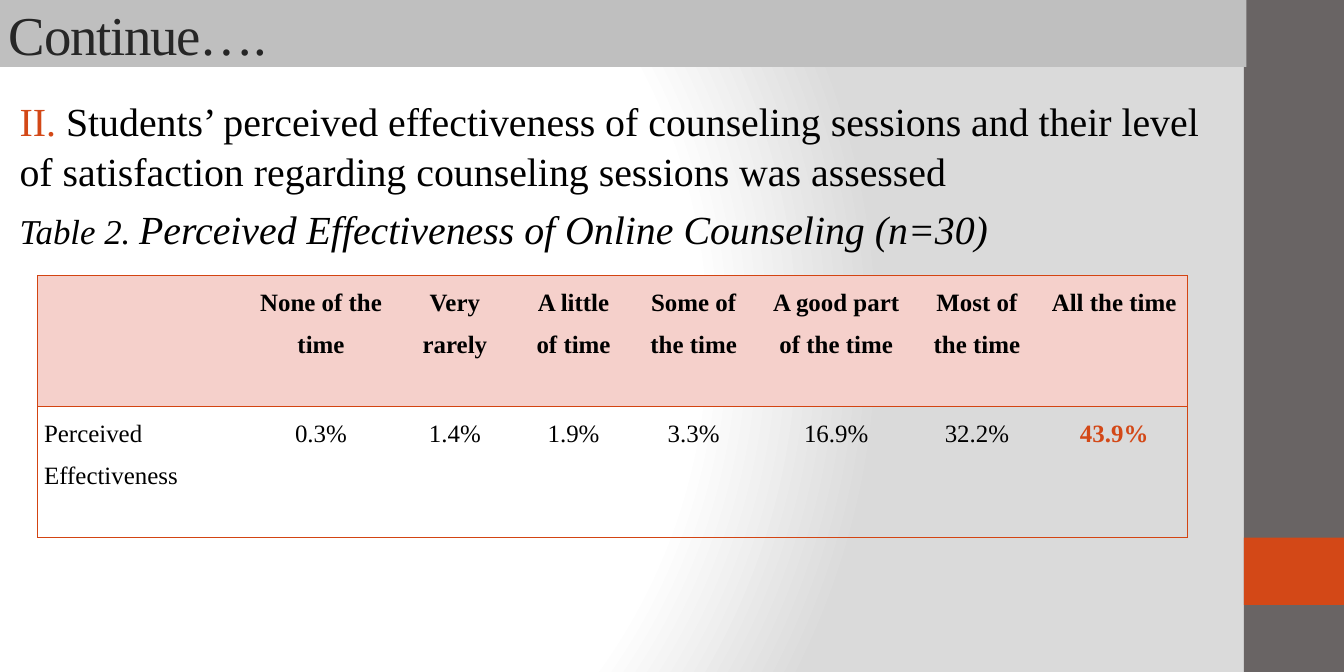
from lxml import etree
from pptx import Presentation
from pptx.dml.color import RGBColor
from pptx.enum.shapes import MSO_SHAPE
from pptx.enum.text import MSO_ANCHOR, MSO_AUTO_SIZE, PP_ALIGN
from pptx.oxml import parse_xml
from pptx.oxml.ns import nsdecls, qn
from pptx.util import Cm, Pt

RECT = MSO_SHAPE.RECTANGLE
MIDDLE, TOP = MSO_ANCHOR.MIDDLE, MSO_ANCHOR.TOP
LEFT, CENTER, JUST = PP_ALIGN.LEFT, PP_ALIGN.CENTER, PP_ALIGN.JUSTIFY
FIXED = MSO_AUTO_SIZE.NONE
FONT = "Times New Roman"
PLAIN = "{2D5ABB26-0587-4C30-8999-92F81FD0307C}"
HUES = {
    "white": "FFFFFF", "mist": "DADADA", "side": "696464",
    "accent": "D34817", "band": "BFBFBF", "title": "262626",
    "text": "000000", "head": "F5D0CB", "rule": "D34412",
}
COLS = [6.05, 3.96, 3.63, 3.1, 3.71, 4.37, 3.61, 4.17]
ROWS = [
    ["", "None of the time", "Very rarely", "A little of time",
     "Some of the time", "A good part of the time", "Most of the time",
     "All the time"],
    ["Perceived Effectiveness", "0.3%", "1.4%", "1.9%", "3.3%", "16.9%",
     "32.2%", "43.9%"],
]
LINES = [
    [("II. ", 32, "accent", False),
     ("Students’ perceived effectiveness of counseling sessions and their "
      "level of satisfaction regarding counseling sessions was assessed",
      32, "text", False)],
    [("Table 2. ", 28, "text", True),
     ("Perceived Effectiveness of Online Counseling (n=30)",
      32, "text", True)],
]


def hue(name):
    return RGBColor.from_string(HUES[name])


def style(run, size, name, bold=False, slant=False):
    font = run.font
    font.name, font.size = FONT, Pt(size)
    font.bold, font.italic = bold, slant
    font.color.rgb = hue(name)


def place(shape, box):
    shape.left, shape.top, shape.width, shape.height = map(Cm, box)


def paint_back(slide):
    slide.background.fill.gradient()
    old = slide.element.find(".//" + qn("a:gradFill"))
    stops = "".join(
        f'<a:gs pos="{pos}"><a:srgbClr val="{HUES[name]}"/></a:gs>'
        for pos, name in ((0, "white"), (75000, "white"), (100000, "mist")))
    new = parse_xml(
        f'<a:gradFill {nsdecls("a")} rotWithShape="1">'
        f'<a:gsLst>{stops}</a:gsLst><a:path path="circle">'
        '<a:fillToRect l="20000" t="50000" r="100000" b="50000"/>'
        '</a:path></a:gradFill>')
    old.getparent().replace(old, new)


def add_side(slide, box):
    left, top, width, height = box
    tree = slide.shapes.element
    parts = [("side", top, height), ("accent", top + height * 0.8, height / 10)]
    for spot, (name, start, tall) in enumerate(parts, 2):
        bar = slide.shapes.add_shape(
            RECT, Cm(left), Cm(start), Cm(width), Cm(tall))
        bar.shadow.inherit = False
        bar.fill.solid()
        bar.fill.fore_color.rgb = hue(name)
        bar.line.fill.background()
        tree.insert(spot, bar.element)


def fill_title(slide, box):
    title = slide.shapes.title
    place(title, box)
    title.fill.solid()
    title.fill.fore_color.rgb = hue("band")
    frame = title.text_frame
    frame.text = "Continue…."
    frame.auto_size, frame.vertical_anchor = FIXED, MIDDLE
    para = frame.paragraphs[0]
    para.alignment = LEFT
    style(para.runs[0], 44, "title")
    para.runs[0].font.element.set("spc", "-100") if hasattr(
        para.runs[0].font, "element") else para.runs[0]._r.get_or_add_rPr().set(
        "spc", "-100")


def fill_body(slide, box):
    body = slide.placeholders[1]
    place(body, box)
    frame = body.text_frame
    frame.auto_size, frame.vertical_anchor = FIXED, TOP
    frame.text = "\n".join("" for _ in LINES)
    for para, line in zip(frame.paragraphs, LINES):
        para.alignment = LEFT
        para.line_spacing = 1.05
        para.space_before = Pt(6.4)
        props = para._p.get_or_add_pPr()
        props.set("marL", str(Cm(0.3)))
        props.set("indent", "0")
        etree.SubElement(props, qn("a:buNone"))
        for text, size, name, slant in line:
            run = para.add_run()
            run.text = text
            style(run, size, name, slant=slant)


def add_rule(cell, side):
    cell._tc.get_or_add_tcPr().append(parse_xml(
        f'<a:ln{side} {nsdecls("a")} w="12700"><a:solidFill>'
        f'<a:srgbClr val="{HUES["rule"]}"/></a:solidFill></a:ln{side}>'))


def fill_cell(cell, text, row, col):
    last = col == len(COLS) - 1
    sides = [("L", col == 0), ("R", last), ("T", True), ("B", row == 1)]
    for side, drawn in sides:
        if drawn:
            add_rule(cell, side)
    if row == 0:
        cell.fill.solid()
        cell.fill.fore_color.rgb = hue("head")
    else:
        cell.fill.background()
    cell.margin_left = cell.margin_right = Cm(0.18)
    cell.margin_top = cell.margin_bottom = 0
    cell.text = text
    para = cell.text_frame.paragraphs[0]
    para.alignment = JUST if col == 0 else CENTER
    para.line_spacing = 1.5
    mark = row == 1 and last
    for run in para.runs:
        style(run, 20, "accent" if mark else "text", bold=row == 0 or mark)


def add_grid(slide, box):
    frame = slide.shapes.add_table(len(ROWS), len(COLS), *map(Cm, box))
    grid = frame.table
    grid.first_row = grid.horz_banding = False
    frame.element.find(".//" + qn("a:tableStyleId")).text = PLAIN
    for column, width in zip(grid.columns, COLS):
        column.width = Cm(width)
    for row, texts in enumerate(ROWS):
        grid.rows[row].height = Cm(box[3] / len(ROWS))
        for col, text in enumerate(texts):
            fill_cell(grid.cell(row, col), text, row, col)


def main():
    deck = Presentation()
    deck.slide_width, deck.slide_height = Cm(38.1), Cm(19.05)
    slide = deck.slides.add_slide(deck.slide_layouts[1])
    paint_back(slide)
    add_side(slide, (35.26, 0, 2.84, 19.05))
    fill_title(slide, (0, 0, 35.33, 1.9))
    fill_body(slide, (0, 2.54, 35.36, 16.51))
    add_grid(slide, (1.07, 7.82, 32.6, 7.42))
    deck.save("out.pptx")


if __name__ == "__main__":
    main()
